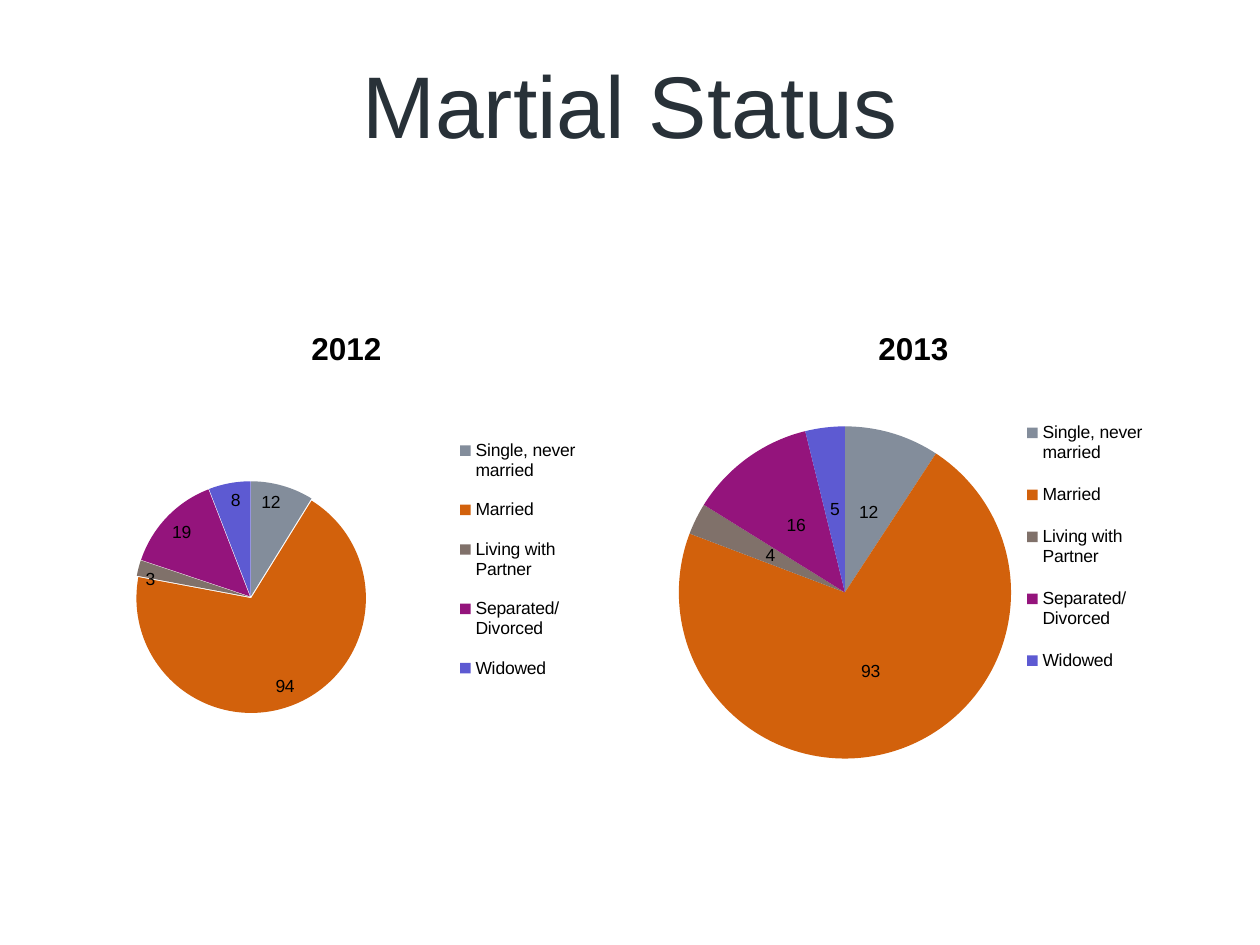
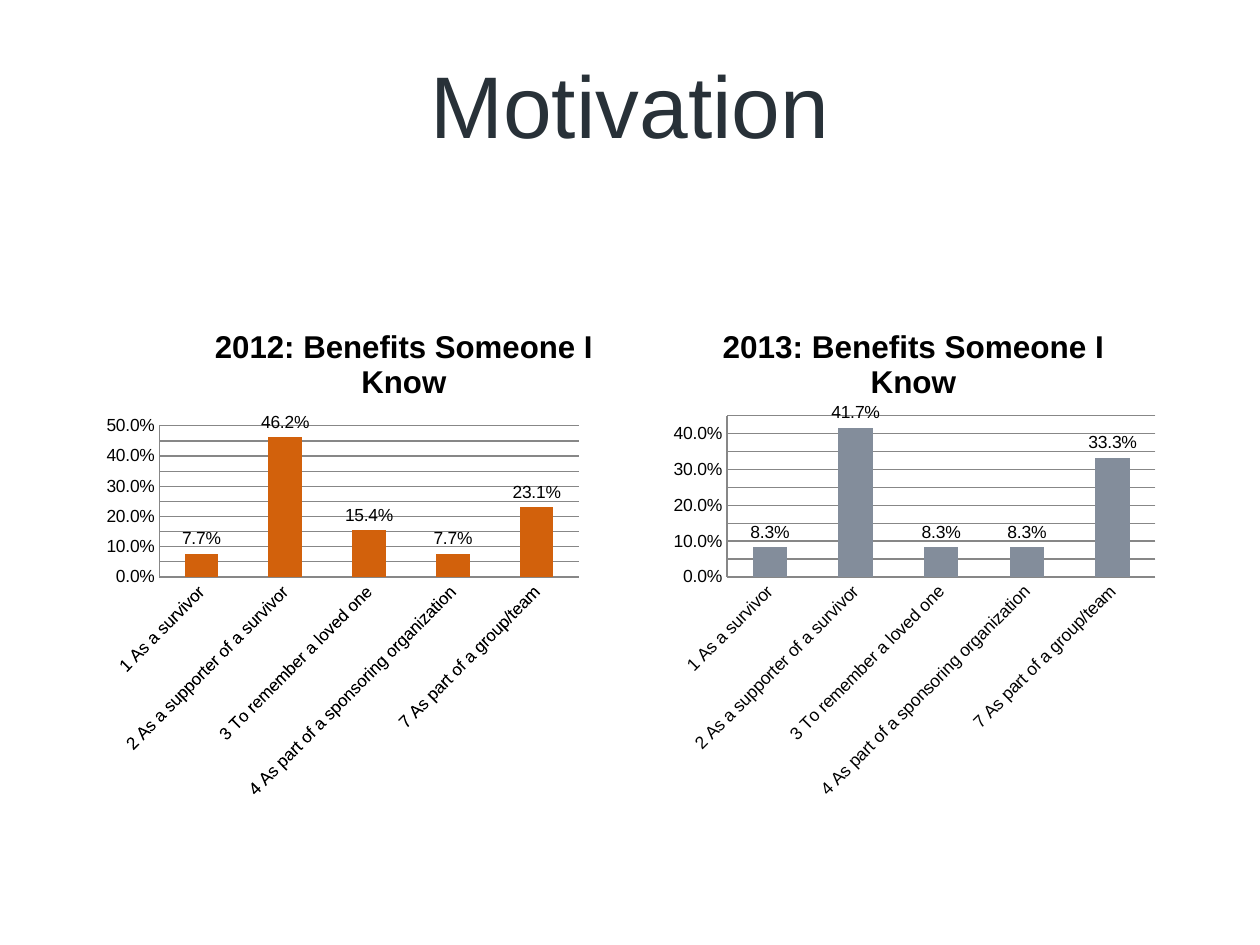
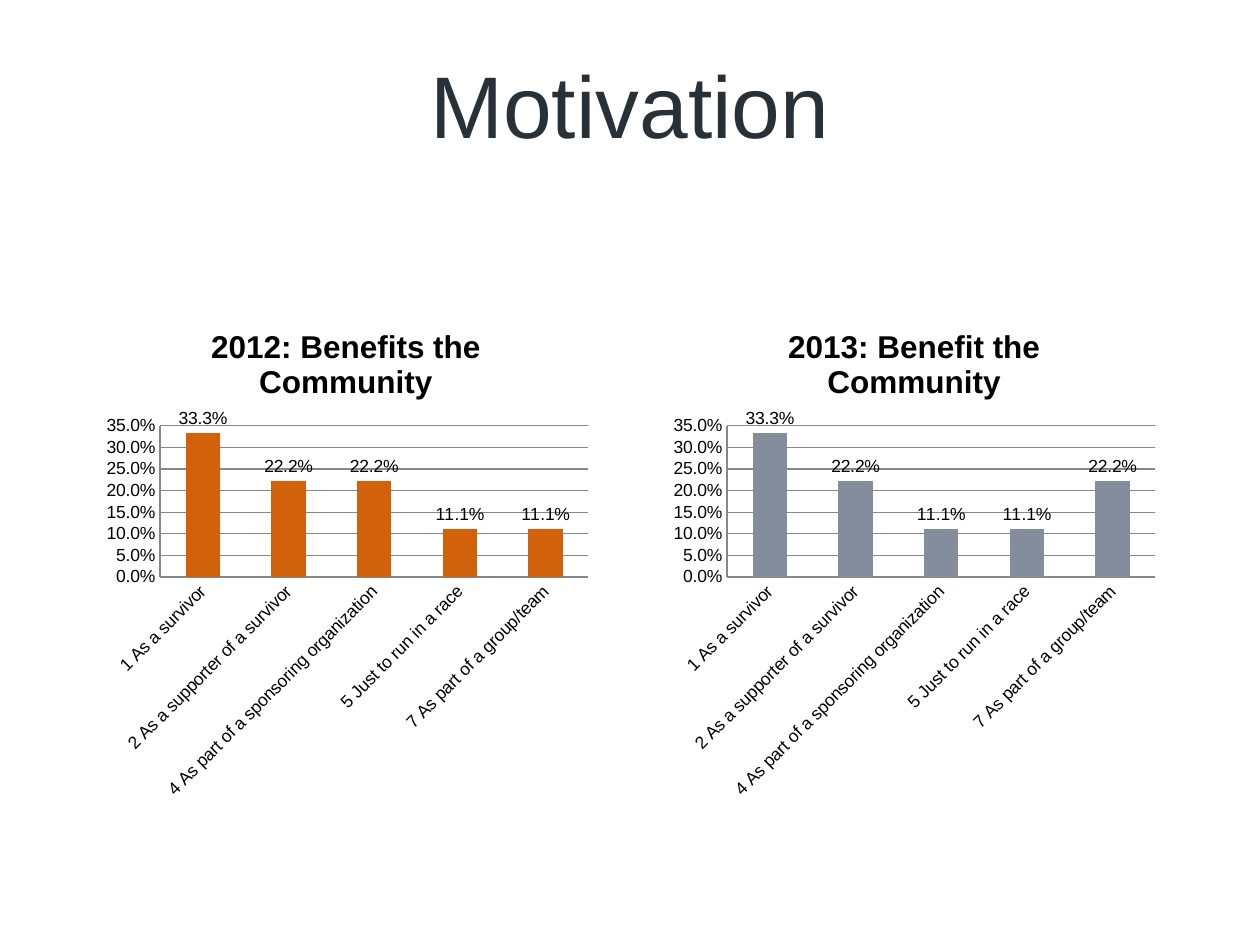
from lxml import etree
from pptx import Presentation
from pptx.chart.data import CategoryChartData
from pptx.dml.color import RGBColor
from pptx.enum.chart import XL_CHART_TYPE, XL_LABEL_POSITION, XL_LEGEND_POSITION, XL_TICK_MARK
from pptx.enum.text import MSO_ANCHOR, MSO_AUTO_SIZE, PP_ALIGN
from pptx.oxml.ns import qn
from pptx.util import Pt

PIE, COLUMN = XL_CHART_TYPE.PIE, XL_CHART_TYPE.COLUMN_CLUSTERED
INSIDE_END, CENTER = XL_LABEL_POSITION.INSIDE_END, XL_LABEL_POSITION.CENTER
OUTSIDE_END = XL_LABEL_POSITION.OUTSIDE_END
LEGEND_RIGHT = XL_LEGEND_POSITION.RIGHT
NO_TICKS = XL_TICK_MARK.NONE

COLORS = {
    "title": "283138", "text": "000000", "grid": "878787",
    "slate": "838D9B", "orange": "D2610C", "taupe": "80716A",
    "purple": "94147C", "violet": "5D5AD2",
}
PIE_COLORS = ["slate", "orange", "taupe", "purple", "violet"]
TITLE_FONT = {"name": "Arial", "size": Pt(50), "bold": False}
CHART_FONT = {"name": "Arial", "size": Pt(10), "bold": False}
CHART_TITLE_FONT = {"name": "Arial", "size": Pt(18), "bold": True}
CHART_LEFTS = [54, 378]
CHART_TOP, CHART_SIZE = 174.25, 288
COLUMN_PLOT = {"x": 0.13, "y": 0.24, "w": 0.85, "h": 0.3}

STATUSES = ["Single, never married", "Married", "Living with Partner",
            "Separated/Divorced", "Widowed"]
SURVIVOR = "1 As a survivor"
SUPPORTER = "2 As a supporter of a survivor"
SPONSOR = "4 As part of a sponsoring organization"
TEAM = "7 As part of a group/team"
SOMEONE_REASONS = [SURVIVOR, SUPPORTER, "3 To remember a loved one", SPONSOR, TEAM]
COMMUNITY_REASONS = [SURVIVOR, SUPPORTER, SPONSOR, "5 Just to run in a race", TEAM]

# Each chart: title, values, and its own settings
SLIDES = [
    ("Martial Status", PIE, STATUSES, [
        ("2012", [12, 94, 3, 19, 8],
         {"labels": INSIDE_END, "explosion": 1,
          "plot": {"x": 0.08, "y": 0.2, "w": 0.46, "h": 0.76},
          "legend": {"x": 0.71, "y": 0.23, "w": 0.26, "h": 0.55}}),
        ("2013", [12, 93, 4, 16, 5],
         {"labels": CENTER, "legend": {"x": 0.71, "y": 0.19, "w": 0.26, "h": 0.58}}),
    ]),
    ("Motivation", COLUMN, SOMEONE_REASONS, [
        ("2012: Benefits Someone I Know", [0.077, 0.462, 0.154, 0.077, 0.231],
         {"color": "orange", "maximum": 0.5, "title": {"x": 0.23, "y": 0.03},
          "plot": {**COLUMN_PLOT, "w": 0.84}}),
        ("2013: Benefits Someone I Know", [0.083, 0.417, 0.083, 0.083, 0.333],
         {"color": "slate", "maximum": 0.45, "title": {"x": 0.11, "y": 0.03},
          "plot": {**COLUMN_PLOT, "y": 0.22, "h": 0.32}}),
    ]),
    ("Motivation", COLUMN, COMMUNITY_REASONS, [
        ("2012: Benefits the Community", [0.333, 0.222, 0.222, 0.111, 0.111],
         {"color": "orange", "maximum": 0.35, "title": {"x": 0.22, "y": 0.03},
          "plot": COLUMN_PLOT}),
        ("2013: Benefit the Community", [0.333, 0.222, 0.111, 0.111, 0.222],
         {"color": "slate", "maximum": 0.35, "title": {"x": 0.24, "y": 0.03},
          "plot": COLUMN_PLOT}),
    ]),
]


def format_font(font, values, color):
    for name, value in values.items():
        setattr(font, name, value)
    font.color.rgb = RGBColor.from_string(COLORS[color])


def place_chart_part(part, position, index):
    """Give a part of a chart a fixed place, as fractions of the chart."""
    for automatic in part.findall(qn("c:layout")):
        part.remove(automatic)
    layout = etree.Element(qn("c:layout"))
    manual = etree.SubElement(layout, qn("c:manualLayout"))
    if part.tag == qn("c:plotArea"):
        etree.SubElement(manual, qn("c:layoutTarget"), val="inner")
    for axis in ("x", "y"):
        etree.SubElement(manual, qn(f"c:{axis}Mode"), val="edge")
    for name, value in position.items():
        etree.SubElement(manual, qn(f"c:{name}"), val=str(value))
    part.insert(index, layout)


presentation = Presentation()
presentation.slide_width, presentation.slide_height = Pt(720), Pt(540)
title_only = presentation.slide_layouts[5]

for slide_title, chart_type, categories, charts in SLIDES:
    slide = presentation.slides.add_slide(title_only)

    # Slide title
    title = slide.shapes.title
    title.left, title.top, title.width, title.height = Pt(54), Pt(5), Pt(612), Pt(108)
    title.text_frame.text = slide_title
    title.text_frame.auto_size = MSO_AUTO_SIZE.NONE
    title.text_frame.vertical_anchor = MSO_ANCHOR.MIDDLE
    paragraph = title.text_frame.paragraphs[0]
    paragraph.alignment = PP_ALIGN.CENTER
    format_font(paragraph.runs[0].font, TITLE_FONT, "title")

    for left, (chart_title, values, settings) in zip(CHART_LEFTS, charts):
        number_format = "###0" if chart_type == PIE else "###0.0%"
        data = CategoryChartData(number_format=number_format)
        data.categories = categories
        data.add_series("Series 1", values)
        chart = slide.shapes.add_chart(chart_type, Pt(left), Pt(CHART_TOP),
                                       Pt(CHART_SIZE), Pt(CHART_SIZE), data).chart
        format_font(chart.font, CHART_FONT, "text")

        # Chart title and plot area
        chart.has_title = True
        chart.chart_title.text_frame.text = chart_title
        run = chart.chart_title.text_frame.paragraphs[0].runs[0]
        format_font(run.font, CHART_TITLE_FONT, "text")
        if "title" in settings:
            place_chart_part(chart.chart_title._element, settings["title"], 1)
        if "plot" in settings:
            place_chart_part(chart._chartSpace.chart.plotArea, settings["plot"], 0)

        # Data labels
        plot = chart.plots[0]
        series = plot.series[0]
        plot.vary_by_categories = chart_type == PIE
        plot.has_data_labels = True
        labels = plot.data_labels
        labels.show_value = True
        labels.number_format = number_format
        labels.number_format_is_linked = False
        labels.position = settings.get("labels", OUTSIDE_END)
        format_font(labels.font, CHART_FONT, "text")

        chart.has_legend = chart_type == PIE
        if chart_type == PIE:
            # Pie slices and legend
            chart.legend.position = LEGEND_RIGHT
            chart.legend.include_in_layout = False
            format_font(chart.legend.font, CHART_FONT, "text")
            place_chart_part(chart.legend._element, settings["legend"], 1)
            for index, color in enumerate(PIE_COLORS):
                fill = series.points[index].format.fill
                fill.solid()
                fill.fore_color.rgb = RGBColor.from_string(COLORS[color])
            if "explosion" in settings:
                explosion = etree.Element(qn("c:explosion"), val=str(settings["explosion"]))
                series._element.find(qn("c:dPt")).addprevious(explosion)
        else:
            # Columns, axes and gridlines
            plot.gap_width = 150
            series.format.fill.solid()
            series.format.fill.fore_color.rgb = RGBColor.from_string(COLORS[settings["color"]])
            value_axis, category_axis = chart.value_axis, chart.category_axis
            value_axis.minimum_scale = 0
            value_axis.maximum_scale = settings["maximum"]
            value_axis.major_unit = 0.05
            value_axis.has_major_gridlines = True
            value_axis.tick_labels.number_format = number_format
            value_axis.tick_labels.number_format_is_linked = False
            for axis in (value_axis, category_axis):
                axis.major_tick_mark = axis.minor_tick_mark = NO_TICKS
                format_font(axis.tick_labels.font, CHART_FONT, "text")
            for line in (value_axis.format.line, category_axis.format.line,
                         value_axis.major_gridlines.format.line):
                line.width = Pt(0.75)
                line.color.rgb = RGBColor.from_string(COLORS["grid"])
            label_body = category_axis._element.find(qn("c:txPr")).find(qn("a:bodyPr"))
            label_body.set("rot", "-2700000")

presentation.save("out.pptx")
